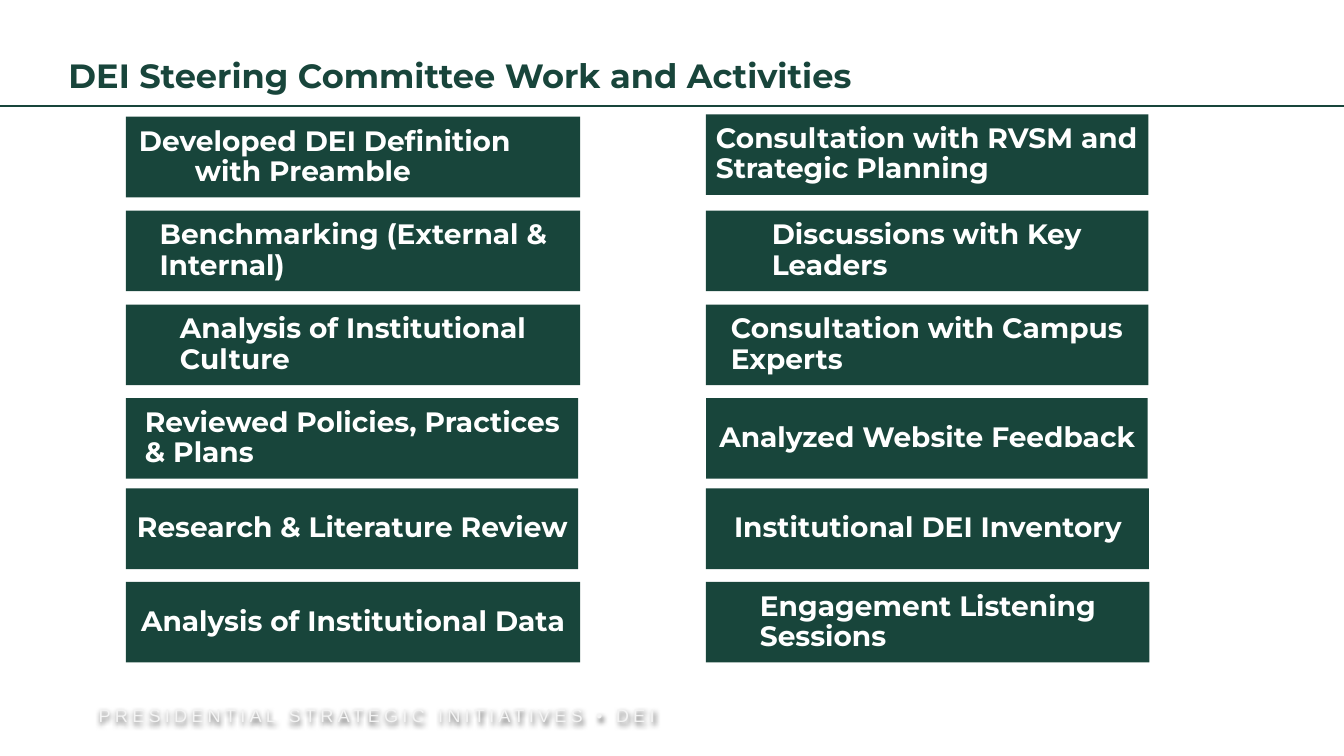
"""Build the DEI Steering Committee work and activities slide."""
import pptx
import pptx.dml.color
import pptx.enum.shapes
import pptx.enum.text
import pptx.oxml
import pptx.oxml.ns
import pptx.util

Pt = pptx.util.Pt
RGB = pptx.dml.color.RGBColor.from_string
COLORS = {"green": "18453B", "white": "FFFFFF", "footer": "F4F4F4", "shadow": "000000"}
HEADING = {"name": "Montserrat", "size": Pt(24), "bold": True}
ACTIVITY = {"name": "Montserrat", "size": Pt(20), "bold": True}
FOOTER = {"name": "Arial", "size": Pt(13)}
NS = pptx.oxml.ns.nsdecls("a")


def write(tf, text, color, formats):
    tf.word_wrap = True
    p = tf.paragraphs[0]
    p.alignment = pptx.enum.text.PP_ALIGN.LEFT
    r = p.add_run()
    r.text = text
    r.font.color.rgb = RGB(COLORS[color])
    for name, value in formats.items():
        setattr(r.font, name, value)
    return p


prs = pptx.Presentation()
prs.slide_width, prs.slide_height = Pt(960), Pt(540)
s = prs.slides.add_slide(prs.slide_layouts[6])

footer = s.shapes.add_textbox(Pt(63.4), Pt(499.7), Pt(552.2), Pt(23))
p = write(footer.text_frame, "PRESIDENTIAL STRATEGIC INITIATIVES • DEI", "footer", FOOTER)
p.runs[0].font._element.set("spc", "300")
footer._element.spPr.append(pptx.oxml.parse_xml(
    f'<a:effectLst {NS}><a:outerShdw blurRad="50800" dist="19050" dir="5400000" algn="t" rotWithShape="0">'
    f'<a:srgbClr val="{COLORS["shadow"]}"><a:alpha val="65000"/></a:srgbClr></a:outerShdw></a:effectLst>'))

title = s.shapes.add_textbox(Pt(41.8), Pt(35.9), Pt(882), Pt(36))
write(title.text_frame, "DEI Steering Committee Work and Activities", "green", HEADING)

rule = s.shapes.add_connector(pptx.enum.shapes.MSO_CONNECTOR.STRAIGHT, 0, Pt(75.6), Pt(960), Pt(75.6))
rule.line.color.rgb = RGB(COLORS["green"])
rule.line.width = Pt(1.5)
rule._element.spPr.append(pptx.oxml.parse_xml(f"<a:effectLst {NS}/>"))

LOWER_TOPS = [150.4, 217.6, 284.4, 348.9, 415.6]
LEFT = [
    ("Developed DEI Definition with Preamble", 324.5, 9.3, 40),
    ("Benchmarking (External & Internal)", 324.5, 24, 0),
    ("Analysis of Institutional Culture", 324.5, 38.5, 0),
    ("Reviewed Policies, Practices & Plans", 323, 13.5, 0),
    ("Research & Literature Review", 323, 7.8, 0),
    ("Analysis of Institutional Data", 324.5, 10.8, 0),
]
RIGHT = [
    ("Consultation with RVSM and Strategic Planning", 316, 7.2, 0),
    ("Discussions with Key Leaders", 316, 47, 0),
    ("Consultation with Campus Experts", 316, 17.7, 0),
    ("Analyzed Website Feedback", 315.4, 9.5, 0),
    ("Institutional DEI Inventory", 316.4, 20, 0),
    ("Engagement Listening Sessions", 316.8, 38.5, 0),
]
for x, first_top, activities in ((90, 83.4, LEFT), (504.3, 81.7, RIGHT)):
    for top, (text, width, inset, hang) in zip([first_top] + LOWER_TOPS, activities):
        sp = s.shapes.add_shape(pptx.enum.shapes.MSO_SHAPE.RECTANGLE, Pt(x), Pt(top), Pt(width), Pt(57.6))
        sp.shadow.inherit = False
        sp.fill.solid()
        sp.fill.fore_color.rgb = RGB(COLORS["green"])
        sp.line.fill.background()
        tf = sp.text_frame
        tf.vertical_anchor = pptx.enum.text.MSO_ANCHOR.MIDDLE
        tf.margin_left, tf.margin_right = Pt(inset), Pt(4)
        p = write(tf, text, "white", ACTIVITY)
        p.line_spacing = 0.9
        if hang:
            p._p.get_or_add_pPr().set("marL", str(Pt(hang)))
            p._p.get_or_add_pPr().set("indent", str(-Pt(hang)))

prs.save("out.pptx")
